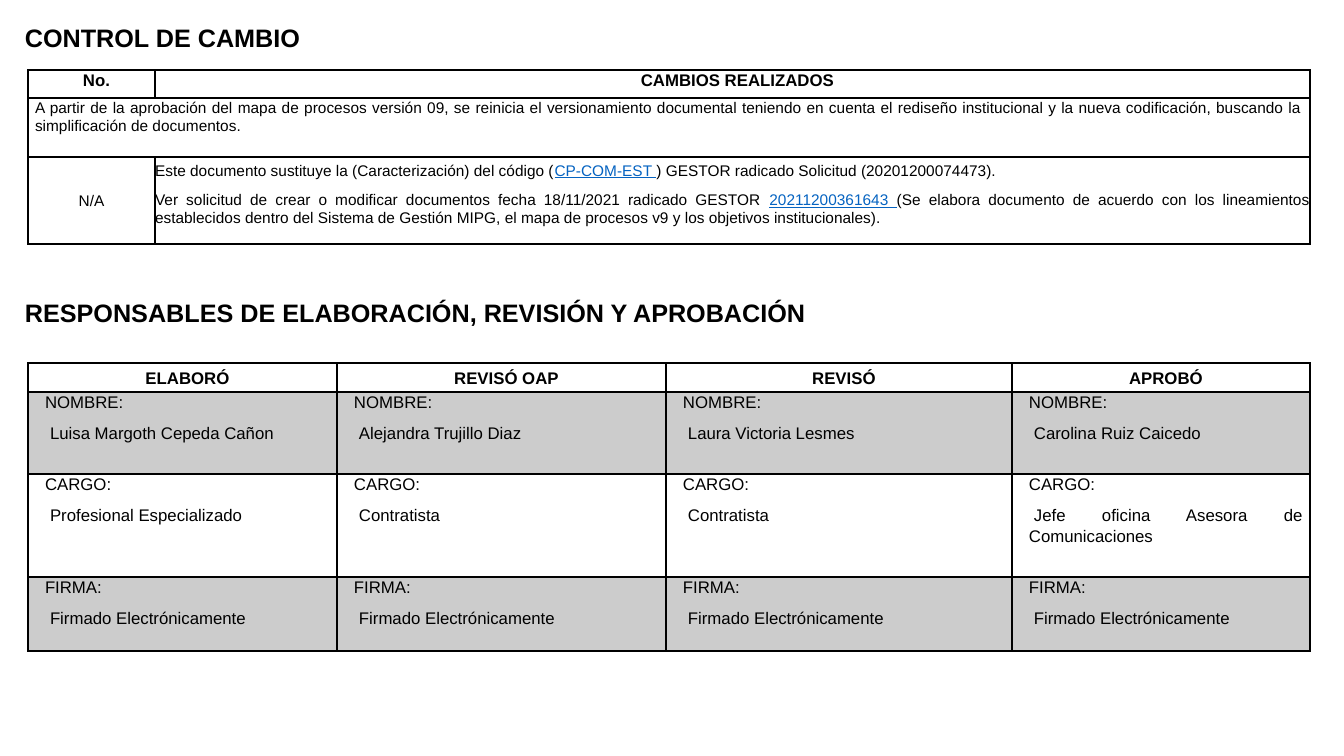
import pptx
import pptx.util
import pptx.dml.color
import pptx.enum.text
import pptx.oxml.ns
from lxml import etree

PX = 9071  # EMU per px
COLORS = {"ink": "000000", "link": "0563C1", "shade": "CCCCCC"}
ALIGN = pptx.enum.text.PP_ALIGN
ANCHOR = pptx.enum.text.MSO_ANCHOR


def write(tf, paragraphs, size, bold=False, align=ALIGN.JUSTIFY, left=0, first=0):
    """Fill tf; a paragraph is a list of runs, every second run is a link.

    left indents all lines, first also the first line of later paragraphs.
    """
    tf.word_wrap = True
    for i, runs in enumerate(paragraphs):
        p = tf.add_paragraph() if i else tf.paragraphs[0]
        p.alignment = align
        p.line_spacing = 1.07
        p.space_after = pptx.util.Pt(8)
        pPr = p._p.get_or_add_pPr()
        pPr.set("marL", str(left * PX))
        pPr.set("indent", str(first * PX if i else 0))
        p.font.name = "Arial"
        p.font.size = pptx.util.Pt(size)
        p.font.bold = bold
        for j, text in enumerate(runs):
            r = p.add_run()
            r.text = text
            r.font.underline = j % 2 == 1
            color = COLORS["link" if j % 2 else "ink"]
            r.font.color.rgb = pptx.dml.color.RGBColor.from_string(color)


def add_grid(s, top, widths, heights):
    """Add a plain table with black borders and no fill."""
    table = s.shapes.add_table(len(heights), len(widths), 28 * PX, top * PX,
                               sum(widths) * PX, sum(heights) * PX).table
    table.first_row = table.horz_banding = False
    for column, width in zip(table.columns, widths):
        column.width = width * PX
    for row, height in zip(table.rows, heights):
        row.height = height * PX
        for cell in row.cells:
            cell.fill.background()
            cell.margin_left = cell.margin_right = 7 * PX
            cell.margin_top = cell.margin_bottom = 0
            for i, side in enumerate(("a:lnL", "a:lnR", "a:lnT", "a:lnB")):
                ln = etree.Element(pptx.oxml.ns.qn(side), w="12700")
                fill = etree.SubElement(ln, pptx.oxml.ns.qn("a:solidFill"))
                etree.SubElement(fill, pptx.oxml.ns.qn("a:srgbClr"), val=COLORS["ink"])
                cell._tc.get_or_add_tcPr().insert(i, ln)
    return table


prs = pptx.Presentation()
prs.slide_width = 1344 * PX
prs.slide_height = 756 * PX
s = prs.slides.add_slide(prs.slide_layouts[6])

# Headings
for top, width, title in ((15, 682, "CONTROL DE CAMBIO"),
                          (290, 920, "RESPONSABLES DE ELABORACIÓN, REVISIÓN Y APROBACIÓN")):
    sp = s.shapes.add_textbox(15 * PX, top * PX, width * PX, 41 * PX)
    write(sp.text_frame, [[title]], 18, bold=True)

# Change log
changes = add_grid(s, 70, [127, 1155], [28, 59, 87])
for col, header in enumerate(("No.", "CAMBIOS REALIZADOS")):
    write(changes.cell(0, col).text_frame, [[header]], 12, bold=True,
          align=ALIGN.CENTER, left=10)
changes.cell(1, 0).merge(changes.cell(1, 1))
write(changes.cell(1, 0).text_frame, [[
    "A partir de la aprobación del mapa de procesos versión 09, se reinicia el "
    "versionamiento documental teniendo en cuenta el rediseño institucional y la nueva "
    "codificación, buscando la simplificación de documentos."]], 11)
number, detail = changes.cell(2, 0), changes.cell(2, 1)
number.vertical_anchor = ANCHOR.MIDDLE
write(number.text_frame, [["N/A"]], 11, align=ALIGN.CENTER)
detail.margin_left = detail.margin_right = 0
detail.margin_top = 4 * PX
write(detail.text_frame, [
    ["Este documento sustituye la (Caracterización) del código (", "CP-COM-EST ",
     ") GESTOR radicado Solicitud (20201200074473)."],
    ["Ver solicitud de crear o modificar documentos fecha 18/11/2021 radicado GESTOR ",
     "20211200361643 ",
     "(Se elabora documento de acuerdo con los lineamientos establecidos dentro del Sistema "
     "de Gestión MIPG, el mapa de procesos v9 y los objetivos institucionales)."],
], 11)

# Sign-off
people = [
    ("ELABORÓ", "Luisa Margoth Cepeda Cañon", "Profesional Especializado"),
    ("REVISÓ OAP", "Alejandra Trujillo Diaz", "Contratista"),
    ("REVISÓ", "Laura Victoria Lesmes", "Contratista"),
    ("APROBÓ", "Carolina Ruiz Caicedo", "Jefe oficina Asesora de Comunicaciones"),
]
signoff = add_grid(s, 363, [309, 329, 346, 298], [29, 82, 103, 74])
for col, (role, name, post) in enumerate(people):
    head = signoff.cell(0, col)
    head.vertical_anchor = ANCHOR.MIDDLE
    write(head.text_frame, [[role]], 12, bold=True, align=ALIGN.CENTER, left=10)
    for edge in (head._tc.tcPr.find(pptx.oxml.ns.qn("a:lnB")),
                 signoff.cell(1, col)._tc.tcPr.find(pptx.oxml.ns.qn("a:lnT"))):
        edge.set("w", "25400")
    fields = (("NOMBRE:", name), ("CARGO:", post), ("FIRMA:", "Firmado Electrónicamente"))
    for row, (label, value) in enumerate(fields, start=1):
        cell = signoff.cell(row, col)
        write(cell.text_frame, [[label], [value]], 12, left=10, first=5)
        if row % 2:
            cell.fill.solid()
            cell.fill.fore_color.rgb = pptx.dml.color.RGBColor.from_string(COLORS["shade"])

prs.save("out.pptx")
